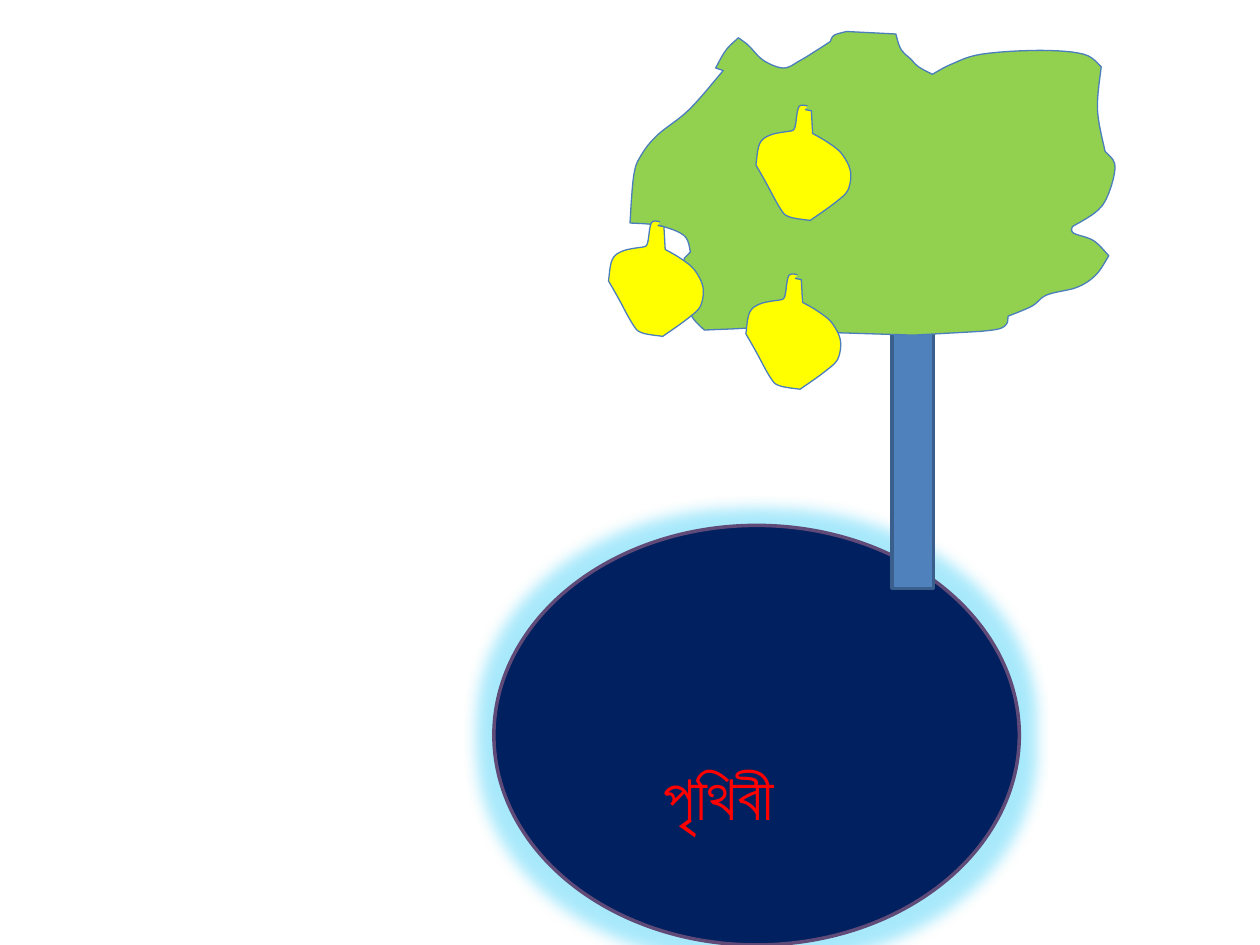
import itertools
from typing import NamedTuple

import lxml.etree
import pptx
import pptx.dml.color
import pptx.enum.shapes
import pptx.enum.text
import pptx.oxml.ns
import pptx.util

Inches = pptx.util.Inches
SHAPES = pptx.enum.shapes.MSO_SHAPE
STEPS_PER_CURVE = 6

COLORS = {
    "earth": "002060",
    "earth_rim": "5F4A78",
    "glow": "25C8F7",
    "trunk": "4F81BD",
    "trunk_edge": "3A5F8C",
    "leaf": "92D050",
    "mango": "FFFF00",
    "outline": "4B7EBC",
    "label": "FF0000",
}


class Point(NamedTuple):
    x: float
    y: float


class Style(NamedTuple):
    fill: str
    line: str
    width: float


class Solid(NamedTuple):
    preset: int
    left: float
    top: float
    width: float
    height: float
    style: Style


class Outline(NamedTuple):
    start: Point
    edges: dict
    style: Style


EARTH = Solid(SHAPES.OVAL, 3.92, 4.17, 4.17, 3.33, Style("earth", "earth_rim", 2))
TRUNK = Solid(SHAPES.RECTANGLE, 7.08, 2.5, 0.33, 2.17, Style("trunk", "trunk_edge", 2))

LEAF = Outline(
    Point(6.32, 2.51),
    {
        "inner fold": [(6.09, 2.59), (5.59, 2.62)],
        "lower left": [(5.49, 2.51), (5.43, 2.33), (5.43, 2.05)],
        "notch": [(5.48, 2)],
        "hollow": [(5.43, 1.87), (5.23, 1.79), (5, 1.77)],
        "left side": [(5.03, 1.39), (5.09, 1.23), (5.22, 1.07), (5.47, 0.87), (5.74, 0.56)],
        "left nick": [(5.68, 0.54)],
        "left peak": [(5.76, 0.4), (5.86, 0.3)],
        "left dip": [(5.94, 0.36), (6.06, 0.48), (6.22, 0.54), (6.35, 0.48), (6.45, 0.42), (6.59, 0.33)],
        "middle rise": [(6.62, 0.28), (6.72, 0.25)],
        "middle top": [(7.11, 0.27)],
        "right dip": [(7.15, 0.39), (7.23, 0.47)],
        "dip floor": [(7.29, 0.53), (7.4, 0.59)],
        "right top": [(7.55, 0.51), (7.79, 0.43), (8.25, 0.4), (8.6, 0.43), (8.74, 0.53)],
        "right side": [(8.71, 0.87), (8.77, 1.2)],
        "right bulge": [(8.85, 1.33), (8.75, 1.63), (8.51, 1.8)],
        "right lobe": [(8.52, 1.85), (8.68, 1.91), (8.8, 2.03)],
        "lower right": [(8.7, 2.18), (8.55, 2.28), (8.31, 2.34), (8.19, 2.43), (8, 2.51)],
        "bottom bend": [(7.99, 2.57), (7.93, 2.61), (7.79, 2.63)],
        "right base": [(7.25, 2.66)],
        "left base": [(6.28, 2.63)],
        "base end": [(6.17, 2.57)],
    },
    Style("leaf", "outline", 0.75),
)

MANGO = Outline(
    Point(0.39, 0.04),
    {
        "stem top": [(0.44, 0.05)],
        "stem right": [(0.45, 0.23)],
        "right cheek": [(0.57, 0.3), (0.68, 0.39), (0.75, 0.53), (0.73, 0.68), (0.64, 0.77)],
        "right tip": [(0.56, 0.83), (0.43, 0.92)],
        "left tip": [(0.26, 0.89), (0.19, 0.82), (0.08, 0.62), (0, 0.48)],
        "left cheek": [(0.03, 0.31), (0.12, 0.24), (0.28, 0.21)],
        "stem left": [(0.31, 0.18), (0.34, 0.02), (0.41, 0.01)],
    },
    Style("mango", "outline", 0.75),
)
MANGO_CORNERS = [Point(4.83, 1.75), Point(5.92, 2.17), Point(6, 0.83)]


def spline(before: float, start: float, end: float, after: float, t: float) -> float:
    slope = (end - before) / 2
    square = before - 2.5 * start + 2 * end - after / 2
    cube = (after - before + 3 * (start - end)) / 2
    return start + slope * t + square * t**2 + cube * t**3


def smooth_edge(anchors: list[Point]) -> list[Point]:
    padded = [anchors[0], *anchors, anchors[-1]]
    curve = []
    for window in zip(padded, padded[1:], padded[2:], padded[3:]):
        xs, ys = zip(*window)
        for step in range(1, STEPS_PER_CURVE + 1):
            t = step / STEPS_PER_CURVE
            curve.append(Point(spline(*xs, t), spline(*ys, t)))
    return curve


def trace(outline: Outline) -> list[Point]:
    edges = list(outline.edges.values())
    corners = [outline.start, *(edge[-1] for edge in edges)]
    curves = [smooth_edge([corner, *edge]) for corner, edge in zip(corners, edges)]
    return [outline.start, *itertools.chain.from_iterable(curves)]


def rgb(color: str) -> pptx.dml.color.RGBColor:
    return pptx.dml.color.RGBColor.from_string(COLORS[color])


def paint(shape, style: Style) -> None:
    shape.shadow.inherit = False
    shape.fill.solid()
    shape.fill.fore_color.rgb = rgb(style.fill)
    shape.line.color.rgb = rgb(style.line)
    shape.line.width = pptx.util.Pt(style.width)


def draw_solid(slide, solid: Solid):
    bounds = [Inches(v) for v in (solid.left, solid.top, solid.width, solid.height)]
    shape = slide.shapes.add_shape(solid.preset, *bounds)
    paint(shape, solid.style)
    return shape


def draw_outline(slide, outline: Outline, corner: Point) -> None:
    points = [(Inches(corner.x + x), Inches(corner.y + y)) for x, y in trace(outline)]
    builder = slide.shapes.build_freeform(*points[0], scale=1.0)
    builder.add_line_segments(points[1:], close=False)
    paint(builder.convert_to_shape(), outline.style)


def add_glow(shape, color: str, radius: float, opacity: int) -> None:
    qn = pptx.oxml.ns.qn
    effects = shape.element.spPr.find(qn("a:effectLst"))
    glow = lxml.etree.SubElement(effects, qn("a:glow"), rad=str(pptx.util.Pt(radius)))
    tint = lxml.etree.SubElement(glow, qn("a:srgbClr"), val=COLORS[color])
    lxml.etree.SubElement(tint, qn("a:alpha"), val=str(opacity * 1000))


def draw_label(slide, text: str) -> None:
    label = slide.shapes.add_textbox(Inches(5.17), Inches(5.96), Inches(1.75), Inches(0.71))
    label.text_frame.word_wrap = True
    label.text_frame.auto_size = pptx.enum.text.MSO_AUTO_SIZE.SHAPE_TO_FIT_TEXT
    run = label.text_frame.paragraphs[0].add_run()
    run.text = text
    run.font.name = "Calibri"
    run.font.size = pptx.util.Pt(36)
    run.font.color.rgb = rgb("label")


def main() -> None:
    deck = pptx.Presentation()
    deck.slide_width, deck.slide_height = Inches(10), Inches(7.5)
    slide = deck.slides.add_slide(deck.slide_layouts[6])

    earth = draw_solid(slide, EARTH)
    add_glow(earth, "glow", radius=18, opacity=40)
    draw_label(slide, "পৃথিবী")
    draw_solid(slide, TRUNK)
    draw_outline(slide, LEAF, Point(0, 0))
    for corner in MANGO_CORNERS:
        draw_outline(slide, MANGO, corner)

    deck.save("out.pptx")


if __name__ == "__main__":
    main()
